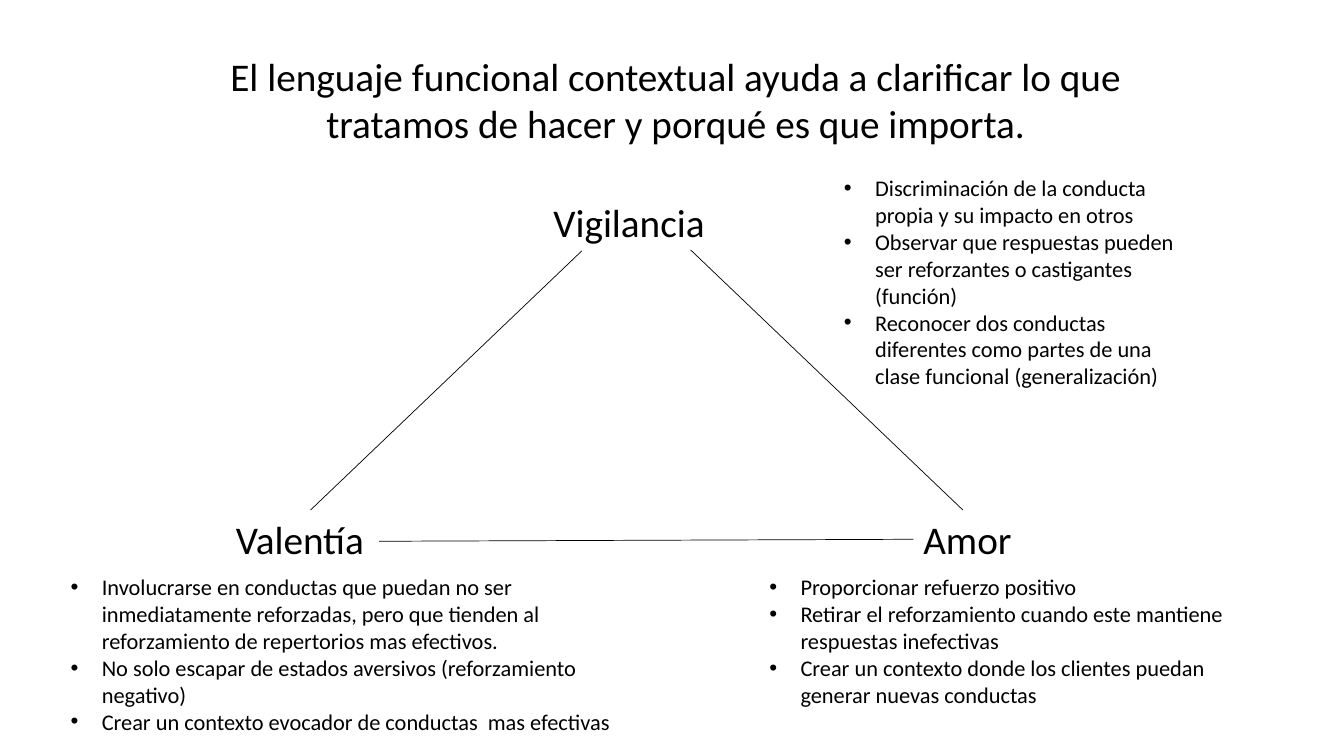
from pptx import Presentation
from pptx import util as u
from pptx.dml.color import RGBColor
from pptx.enum import shapes, text
from lxml import etree

COLORS = {"ink": "000000", "paper": "FFFFFF"}
FONT = "Calibri"
TITLE = ("El lenguaje funcional contextual ayuda a clarificar lo que "
         "tratamos de hacer y porqué es que importa.")

# Grid of one-inch columns and rows: left, top, width, height
GRID = 1.0
HEADING_ROW, LIST_ROW = 5.06, 5.64
HEADING_HEIGHT = 0.57
TITLE_AREA = (1.92, 0.47, 9.56, 1.04)
INDENT = 0.31

CORNERS = [
    {"heading": "Vigilancia",
     "heading_area": (5.39, 1.92, 1.81, HEADING_HEIGHT),
     "list_area": (8.27, 1.68, 3.5, 2.26),
     "points": [
         "Discriminación de la conducta propia y su impacto en otros",
         "Observar que respuestas pueden ser reforzantes o castigantes (función)",
         "Reconocer dos conductas diferentes como partes de una clase funcional "
         "(generalización)"]},
    {"heading": "Amor",
     "heading_area": (9.06, HEADING_ROW, 1.44, HEADING_HEIGHT),
     "list_area": (7.53, LIST_ROW, 4.97, 1.45),
     "points": [
         "Proporcionar refuerzo positivo",
         "Retirar el reforzamiento cuando este mantiene respuestas inefectivas",
         "Crear un contexto donde los clientes puedan generar nuevas conductas"]},
    {"heading": "Valentía",
     "heading_area": (2.24, HEADING_ROW, 2.06, HEADING_HEIGHT),
     "list_area": (0.6, LIST_ROW, 6.07, 1.72),
     "points": [
         "Involucrarse en conductas que puedan no ser inmediatamente reforzadas, "
         "pero que tienden al reforzamiento de repertorios mas efectivos.",
         "No solo escapar de estados aversivos (reforzamiento negativo)",
         "Crear un contexto evocador de conductas  mas efectivas"]},
]
TRIANGLE_SIDES = [
    ((3.08, HEADING_ROW), (5.77, 2.49)),
    ((3.76, 5.37), (9.06, 5.35)),
    ((6.85, 2.48), (9.55, HEADING_ROW)),
]

FRAME_FORMAT = {
    "word_wrap": True, "vertical_anchor": text.MSO_ANCHOR.TOP,
    "auto_size": text.MSO_AUTO_SIZE.SHAPE_TO_FIT_TEXT,
    "margin_left": u.Inches(0.1), "margin_right": u.Inches(0.1),
    "margin_top": u.Inches(0.05), "margin_bottom": u.Inches(0.05),
}
PARAGRAPH_FORMAT = {"space_before": u.Pt(0), "space_after": u.Pt(0), "line_spacing": 1.0}


def set_all(target, values):
    for name, value in values.items():
        setattr(target, name, value)


def cells(lengths):
    return [u.Inches(length * GRID) for length in lengths]


def rgb(name):
    return RGBColor.from_string(COLORS[name])


def write(box, area, lines, size, align=text.PP_ALIGN.LEFT, bulleted=False):
    set_all(box, dict(zip(("left", "top", "width", "height"), cells(area))))
    frame = box.text_frame
    frame.text = "\n".join(lines)
    set_all(frame, FRAME_FORMAT)
    for paragraph in frame.paragraphs:
        set_all(paragraph, {**PARAGRAPH_FORMAT, "alignment": align})
        set_all(paragraph.font, {"name": FONT, "size": u.Pt(size), "bold": False})
        paragraph.font.color.rgb = rgb("ink")
        if bulleted:
            add_bullet(paragraph)


def add_bullet(paragraph):
    properties = paragraph._p.get_or_add_pPr()
    properties.set("marL", str(u.Inches(INDENT)))
    properties.set("indent", str(-u.Inches(INDENT)))
    namespace = properties.nsmap["a"]
    etree.SubElement(properties, f"{{{namespace}}}buFont", typeface="Arial")
    etree.SubElement(properties, f"{{{namespace}}}buChar", char="•")
    # The schema wants the default run properties after the bullet
    for defaults in properties.findall(f"{{{namespace}}}defRPr"):
        properties.append(defaults)


def draw_side(slide, start, end):
    side = slide.shapes.add_connector(
        shapes.MSO_CONNECTOR.STRAIGHT, *cells(start), *cells(end))
    side.line.color.rgb = rgb("ink")
    side.line.width = u.Pt(0.5)
    properties = side._element.spPr
    etree.SubElement(properties, f"{{{properties.nsmap['a']}}}effectLst")


def main():
    deck = Presentation()
    deck.slide_width, deck.slide_height = cells((13.33, 7.5))
    comparison_layout = deck.slide_layouts[4]
    slide = deck.slides.add_slide(comparison_layout)
    slide.background.fill.solid()
    slide.background.fill.fore_color.rgb = rgb("paper")

    title, *bodies = slide.placeholders
    write(title, TITLE_AREA, [TITLE], 28, text.PP_ALIGN.CENTER)
    for corner, body in zip(CORNERS, bodies):
        heading = slide.shapes.add_textbox(*cells(corner["heading_area"]))
        write(heading, corner["heading_area"], [corner["heading"]], 28)
        write(body, corner["list_area"], corner["points"], 16, bulleted=True)
    for unused in bodies[len(CORNERS):]:
        unused._element.getparent().remove(unused._element)

    for start, end in TRIANGLE_SIDES:
        draw_side(slide, start, end)
    deck.save("out.pptx")


if __name__ == "__main__":
    main()
